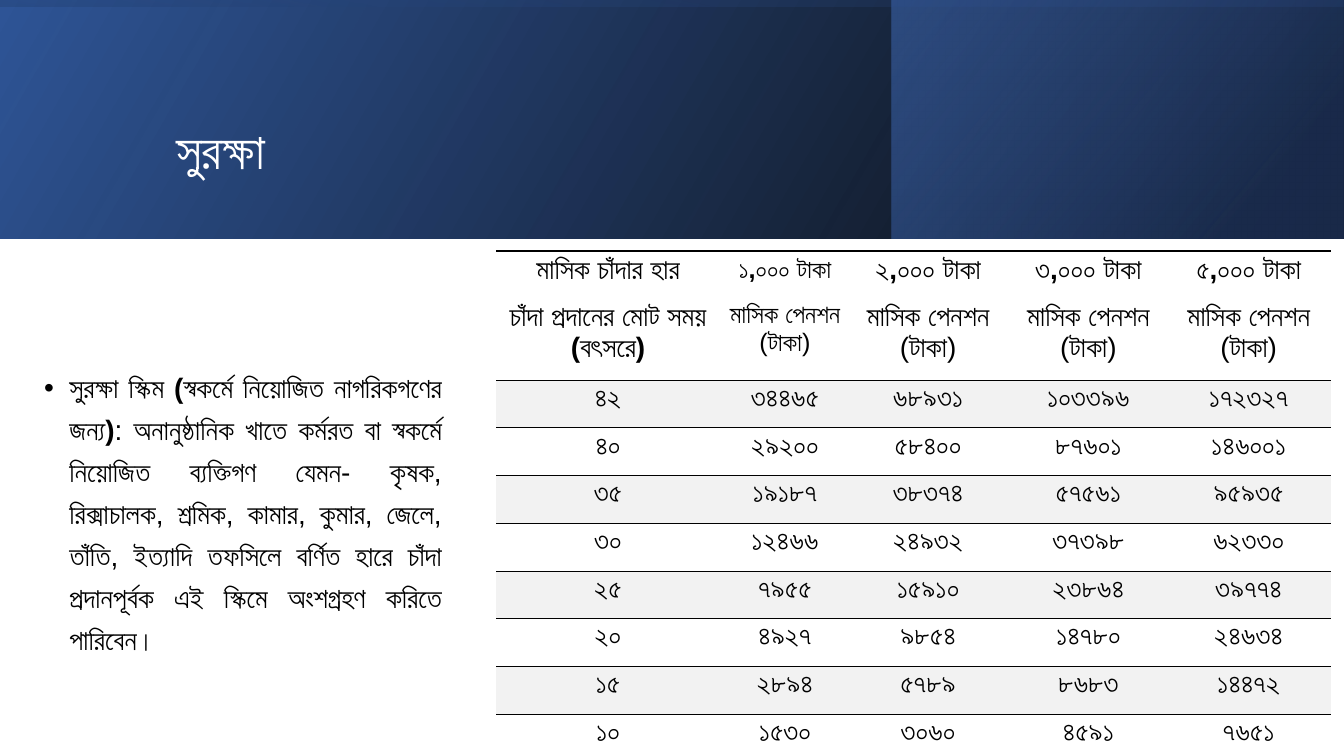
import pptx
import pptx.dml.color
import pptx.enum.shapes
import pptx.enum.text
import pptx.oxml
import pptx.oxml.ns
import pptx.util

Inches = pptx.util.Inches
Pt = pptx.util.Pt
RGBColor = pptx.dml.color.RGBColor
ALIGN = pptx.enum.text.PP_ALIGN
ANCHOR = pptx.enum.text.MSO_ANCHOR
qn = pptx.oxml.ns.qn

BLACK = RGBColor(0x00, 0x00, 0x00)
WHITE = RGBColor(0xFF, 0xFF, 0xFF)
NAVY = RGBColor(0x20, 0x38, 0x64)
BLUE = RGBColor(0x2F, 0x55, 0x97)
SKY = RGBColor(0x44, 0x72, 0xC4)
BAND = RGBColor(0xF2, 0xF2, 0xF2)

PLAIN_TABLE_STYLE = "{2D5ABB26-0587-4C30-8999-92F81FD0307C}"
NAMESPACE = pptx.oxml.ns.nsdecls("a")

# Contribution rates, then years paid and monthly pension at each rate
RATES = ["মাসিক চাঁদার হার", "১,০০০ টাকা", "২,০০০ টাকা", "৩,০০০ টাকা", "৫,০০০ টাকা"]
HEADINGS = ["চাঁদা প্রদানের মোট সময় (বৎসরে)"] + ["মাসিক পেনশন\n(টাকা)"] * 4
PENSIONS = [
    ["৪২", "৩৪৪৬৫", "৬৮৯৩১", "১০৩৩৯৬", "১৭২৩২৭"],
    ["৪০", "২৯২০০", "৫৮৪০০", "৮৭৬০১", "১৪৬০০১"],
    ["৩৫", "১৯১৮৭", "৩৮৩৭৪", "৫৭৫৬১", "৯৫৯৩৫"],
    ["৩০", "১২৪৬৬", "২৪৯৩২", "৩৭৩৯৮", "৬২৩৩০"],
    ["২৫", "৭৯৫৫", "১৫৯১০", "২৩৮৬৪", "৩৯৭৭৪"],
    ["২০", "৪৯২৭", "৯৮৫৪", "১৪৭৮০", "২৪৬৩৪"],
    ["১৫", "২৮৯৪", "৫৭৮৯", "৮৬৮৩", "১৪৪৭২"],
    ["১০", "১৫৩০", "৩০৬০", "৪৫৯১", "৭৬৫১"],
]
SCHEME = "সুরক্ষা স্কিম (স্বকর্মে নিয়োজিত নাগরিকগণের জন্য)"
SCHEME_DETAIL = (
    ": অনানুষ্ঠানিক খাতে কর্মরত বা স্বকর্মে নিয়োজিত ব্যক্তিগণ যেমন- কৃষক, "
    "রিক্সাচালক, শ্রমিক, কামার, কুমার, জেলে, তাঁতি, ইত্যাদি তফসিলে বর্ণিত হারে "
    "চাঁদা প্রদানপূর্বক এই স্কিমে অংশগ্রহণ করিতে পারিবেন।"
)


def apply(target, values):
    for name, value in values.items():
        setattr(target, name, value)


class SlideBuilder:
    font_name = "Arial"

    def __init__(self, slide):
        self.slide = slide

    def add_run(self, paragraph, text, size=20, bold=False, color=BLACK):
        run = paragraph.add_run()
        run.text = text
        apply(run.font, {"name": self.font_name, "size": Pt(size), "bold": bold})
        run.font.color.rgb = color
        run.font._element.append(pptx.oxml.parse_xml(
            f'<a:cs {NAMESPACE} typeface="{self.font_name}"/>'))

    def gradient_panel(self, box, stops, angle, rotation=0):
        shape = self.slide.shapes.add_shape(
            pptx.enum.shapes.MSO_SHAPE.RECTANGLE, *map(Inches, box))
        shape.shadow.inherit = False
        shape.line.fill.background()
        shape.rotation = rotation
        properties = shape._element.spPr
        properties.find(qn("a:xfrm")).set("flipH", "1")
        stop_xml = "".join(
            f'<a:gs pos="{position * 1000}"><a:srgbClr val="{color}">'
            f'<a:alpha val="{alpha * 1000}"/></a:srgbClr></a:gs>'
            for position, color, alpha in stops)
        properties.find(qn("a:prstGeom")).addnext(pptx.oxml.parse_xml(
            f'<a:gradFill {NAMESPACE} rotWithShape="1"><a:gsLst>{stop_xml}</a:gsLst>'
            f'<a:lin ang="{angle * 60000}" scaled="0"/></a:gradFill>'))

    def text_box(self, box, frame_format, paragraph_format, runs, bullet=False):
        frame = self.slide.shapes.add_textbox(*map(Inches, box)).text_frame
        apply(frame, {"word_wrap": True, **frame_format})
        paragraph = frame.paragraphs[0]
        apply(paragraph, paragraph_format)
        for text, style in runs:
            self.add_run(paragraph, text, **style)
        if bullet:
            properties = paragraph._p.get_or_add_pPr()
            properties.set("marL", str(Inches(0.31)))
            properties.set("indent", str(Inches(-0.25)))
            for tag in (f'<a:buFont {NAMESPACE} typeface="Arial"/>',
                        f'<a:buChar {NAMESPACE} char="•"/>'):
                properties.append(pptx.oxml.parse_xml(tag))

    def border(self, cell, side, width):
        cell._tc.get_or_add_tcPr().insert(0, pptx.oxml.parse_xml(
            f'<a:ln{side} {NAMESPACE} w="{Pt(width)}"><a:solidFill>'
            f'<a:srgbClr val="{BLACK}"/></a:solidFill></a:ln{side}>'))

    def cell(self, cell, text, size, bold, anchor, fill):
        apply(cell, {
            "margin_left": 0, "margin_top": Inches(0.02),
            "margin_right": Inches(0.04), "margin_bottom": Inches(0.12),
            "vertical_anchor": anchor,
        })
        if fill:
            cell.fill.solid()
            cell.fill.fore_color.rgb = fill
        else:
            cell.fill.background()
        for index, line in enumerate(text.split("\n")):
            frame = cell.text_frame
            paragraph = frame.add_paragraph() if index else frame.paragraphs[0]
            paragraph.alignment = ALIGN.CENTER
            self.add_run(paragraph, line, size, bold)

    def pension_table(self, box, widths, heights):
        rows = [RATES, HEADINGS] + PENSIONS
        table = self.slide.shapes.add_table(
            len(rows), len(RATES), *map(Inches, box)).table
        apply(table, {"first_row": False, "horz_banding": False})
        table._tbl.tblPr.find(qn("a:tableStyleId")).text = PLAIN_TABLE_STYLE
        for column, width in zip(table.columns, widths):
            column.width = Inches(width)
        for row, height in zip(table.rows, heights):
            row.height = Inches(height)
        for row, texts in enumerate(rows):
            banded = row >= 2 and row % 2 == 0
            for column, text in enumerate(texts):
                cell = table.cell(row, column)
                self.cell(cell, text,
                          size=18 if row < 2 and column == 1 else 20,
                          bold=row == 0 or column == 0,
                          anchor=ANCHOR.TOP if row else ANCHOR.MIDDLE,
                          fill=BAND if banded else None)
                if row == 0:
                    self.border(cell, "T", 2.25)
                elif banded:
                    self.border(cell, "T", 0.5)
                elif row < len(rows) - 1:
                    self.border(cell, "B", 0.5)


def main():
    presentation = pptx.Presentation()
    apply(presentation, {"slide_width": Inches(13.33), "slide_height": Inches(7.5)})
    builder = SlideBuilder(presentation.slides.add_slide(presentation.slide_layouts[6]))

    # Header band
    builder.gradient_panel((0, 0, 13.33, 2.37), [(0, BLACK, 96), (100, BLUE, 100)], 330)
    builder.gradient_panel((8.84, 0, 4.48, 2.37), [(19, NAVY, 68), (100, SKY, 48)], 320)
    builder.gradient_panel((5.48, -5.48, 2.37, 13.33),
                           [(23, BLUE, 16), (99, BLACK, 45)], 350, rotation=270)

    # Title
    builder.text_box(
        (1.51, 0.38, 11.38, 1.72),
        {"vertical_anchor": ANCHOR.MIDDLE, "margin_left": Inches(0.24),
         "margin_top": Inches(0.6)},
        {"line_spacing": 0.9},
        [("সুরক্ষা", {"size": 36, "color": WHITE})])

    # Scheme description
    builder.text_box(
        (0.28, 2.65, 4.2, 3.91),
        {"vertical_anchor": ANCHOR.BOTTOM},
        {"alignment": ALIGN.JUSTIFY, "line_spacing": 1.25},
        [(SCHEME, {"bold": True}), (SCHEME_DETAIL, {})], bullet=True)

    # Pension table
    builder.pension_table((4.92, 2.49, 8.27, 4.85),
                          [2.26, 1.25] + [1.59] * 3, [0.45, 0.8] + [0.45] * 8)

    presentation.save("out.pptx")


if __name__ == "__main__":
    main()
